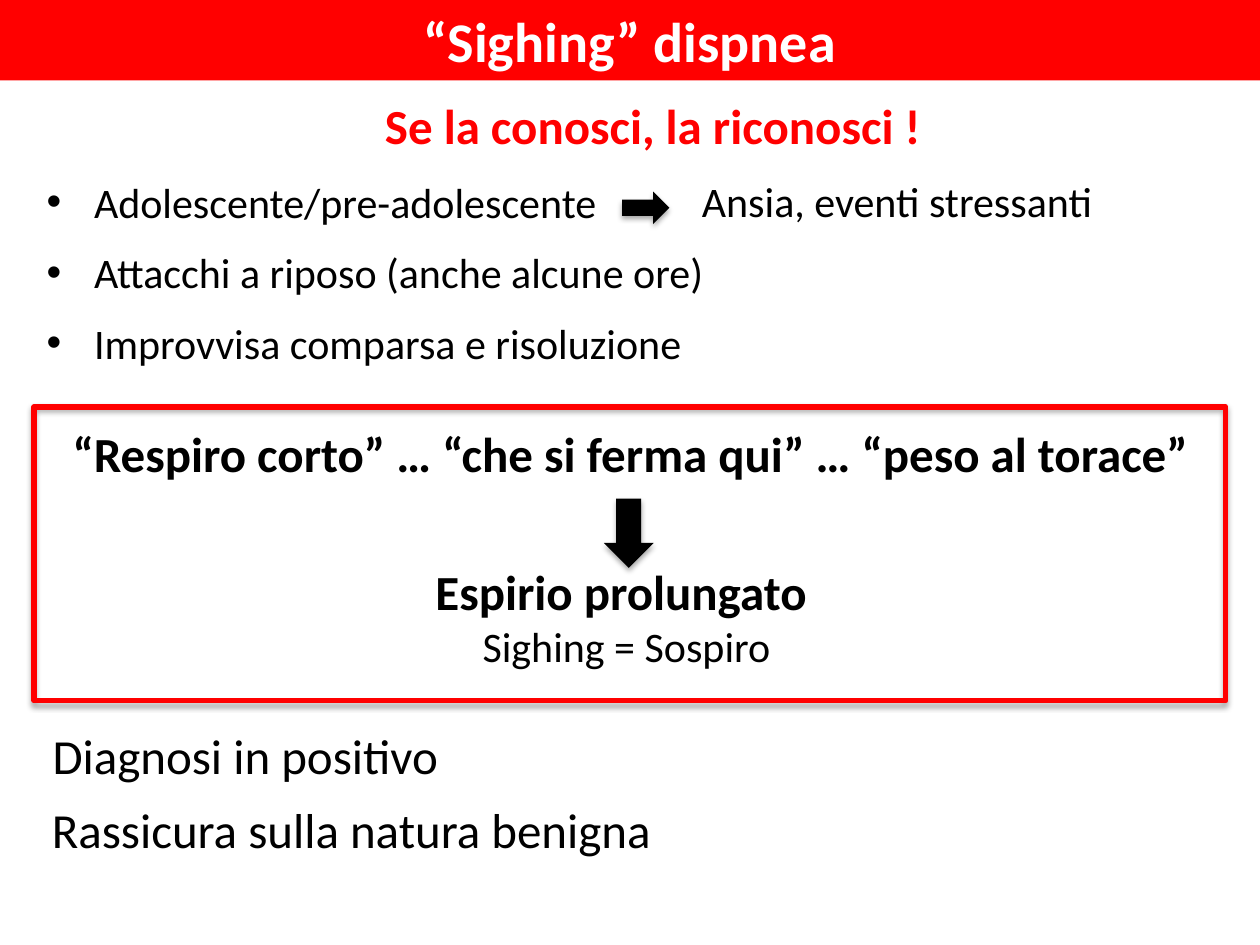
from dataclasses import dataclass

from pptx import Presentation
from pptx.dml.color import RGBColor
from pptx.enum.shapes import MSO_SHAPE
from pptx.enum.text import MSO_ANCHOR, MSO_AUTO_SIZE, PP_ALIGN
from pptx.util import Pt

LEFT, CENTER = PP_ALIGN.LEFT, PP_ALIGN.CENTER
RECT = MSO_SHAPE.RECTANGLE
RIGHT_ARROW, DOWN_ARROW = MSO_SHAPE.RIGHT_ARROW, MSO_SHAPE.DOWN_ARROW
TITLE_AND_CONTENT = 1


@dataclass(frozen=True)
class Theme:
    font: str = "Calibri"
    red: RGBColor = RGBColor(0xFF, 0, 0)
    black: RGBColor = RGBColor(0, 0, 0)
    white: RGBColor = RGBColor(0xFF, 0xFF, 0xFF)
    title: float = 32
    large: float = 28
    body: float = 24
    indent: float = 27
    bullet_gap: float = 11.5
    border: float = 3


class SlideBuilder:
    def __init__(self, prs, theme):
        self.theme = theme
        self.s = prs.slides.add_slide(prs.slide_layouts[TITLE_AND_CONTENT])

    def place(self, sp, box):
        sp.left, sp.top, sp.width, sp.height = map(Pt, box)

    def style(self, p, size, color=None, bold=False, align=LEFT):
        p.alignment = align
        for r in p.runs:
            r.font.name = self.theme.font
            r.font.size = Pt(size)
            r.font.bold = bold
            r.font.color.rgb = color or self.theme.black

    def title(self, text, box):
        sp = self.s.shapes.title
        self.place(sp, box)
        sp.fill.solid()
        sp.fill.fore_color.rgb = self.theme.red
        tf = sp.text_frame
        tf.text = text
        tf.auto_size = MSO_AUTO_SIZE.NONE
        tf.vertical_anchor = MSO_ANCHOR.MIDDLE
        self.style(tf.paragraphs[0], self.theme.title, self.theme.white, True, CENTER)

    def bullets(self, items, box):
        sp = self.s.placeholders[1]
        self.place(sp, box)
        tf = sp.text_frame
        tf.text = "\n".join(items)
        tf.auto_size = MSO_AUTO_SIZE.NONE
        for i, p in enumerate(tf.paragraphs):
            p.space_before = Pt(self.theme.bullet_gap if i else 0)
            pPr = p._p.get_or_add_pPr()
            pPr.set("marL", str(Pt(self.theme.indent)))
            pPr.set("indent", str(-Pt(self.theme.indent)))
            self.style(p, self.theme.body)

    def text(self, text, box, size, **look):
        tf = self.s.shapes.add_textbox(*map(Pt, box)).text_frame
        tf.word_wrap = True
        tf.text = text
        for p in tf.paragraphs:
            self.style(p, size, **look)
        return tf

    def arrow(self, kind, box):
        """Solid arrow that keeps the soft shadow of the template."""
        sp = self.s.shapes.add_shape(kind, *map(Pt, box))
        sp.fill.solid()
        sp.fill.fore_color.rgb = self.theme.black
        sp.line.fill.background()

    def frame(self, box):
        """Hollow frame that keeps the soft shadow of the template."""
        sp = self.s.shapes.add_shape(RECT, *map(Pt, box))
        sp.fill.background()
        sp.line.color.rgb = self.theme.red
        sp.line.width = Pt(self.theme.border)


def main():
    prs = Presentation()
    prs.slide_width, prs.slide_height = Pt(720), Pt(540)
    t = Theme()
    b = SlideBuilder(prs, t)

    b.title("“Sighing” dispnea", (0, 0, 720, 46))
    b.text("Se la conosci, la riconosci !", (123, 51, 500, 41), t.large,
           color=t.red, bold=True, align=CENTER)

    b.bullets(["Adolescente/pre-adolescente",
               "Attacchi a riposo (anche alcune ore)",
               "Improvvisa comparsa e risoluzione"], (19.5, 97, 563, 118))
    b.arrow(RIGHT_ARROW, (355.5, 109.5, 27, 18.5))
    b.text("Ansia, eventi stressanti", (394, 96.5, 278, 36), t.body)

    b.frame((19.5, 232.5, 681, 168))
    b.text("“Respiro corto” … “che si ferma qui” … “peso al torace”",
           (19.5, 238.5, 681, 41), t.large, bold=True, align=CENTER)
    b.arrow(DOWN_ARROW, (345, 285, 28.5, 39.5))
    tf = b.text("Espirio prolungato \nSighing = Sospiro", (93, 317.5, 530, 70.5),
                t.large, bold=True, align=CENTER)
    b.style(tf.paragraphs[1], t.body, align=CENTER)

    b.text("Diagnosi in positivo", (23, 411, 377, 41), t.large)
    b.text("Rassicura sulla natura benigna", (22.5, 453.5, 378, 41), t.large)

    prs.save("out.pptx")


if __name__ == "__main__":
    main()
